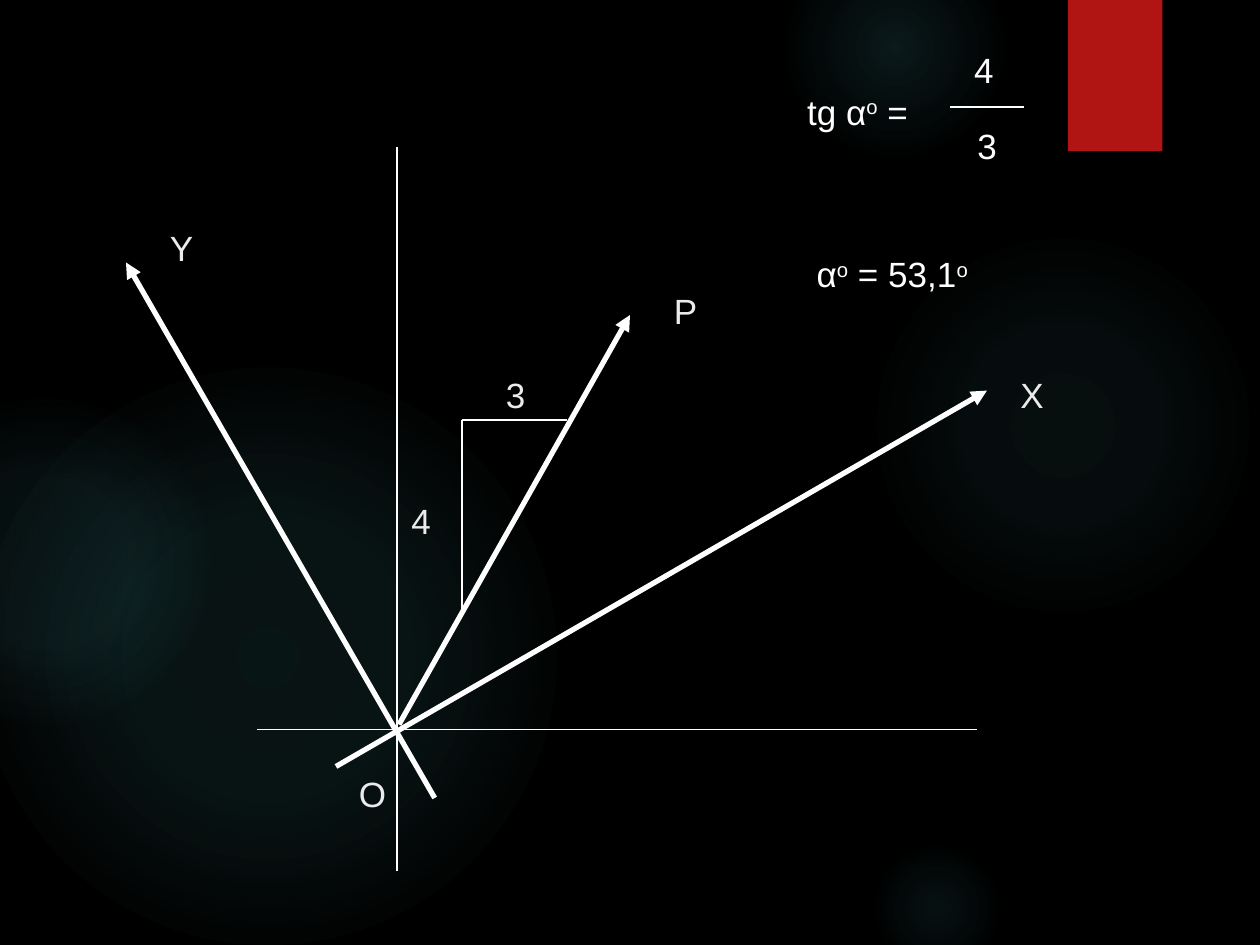
from typing import NamedTuple

from lxml import etree
from pptx import Presentation
from pptx.dml.color import RGBColor
from pptx.enum.shapes import MSO_CONNECTOR, MSO_SHAPE
from pptx.enum.text import MSO_AUTO_SIZE, PP_ALIGN
from pptx.oxml import parse_xml
from pptx.oxml.ns import nsdecls, qn
from pptx.util import Inches, Pt

OVAL, RECT = MSO_SHAPE.OVAL, MSO_SHAPE.RECTANGLE
STRAIGHT = MSO_CONNECTOR.STRAIGHT
JUSTIFY = PP_ALIGN.JUSTIFY
GROW = MSO_AUTO_SIZE.SHAPE_TO_FIT_TEXT

CELL = Inches(1) / 12  # the slide is 120 columns by 90 rows
BLACK, WHITE, PALE, RED, TEAL = "000000", "FFFFFF", "EBEBEB", "B01513", "50B9C1"
THIN, BOLD = 0.75, 3


class Glow(NamedTuple):
    col: float
    row: float
    size: float
    stops: tuple  # (position, opacity) in percent


class Line(NamedTuple):
    start: tuple
    end: tuple
    width: float = THIN
    arrow: bool = False


class Label(NamedTuple):
    col: float
    row: float
    texts: tuple  # plain and raised text by turns
    color: str = PALE
    width: float = 6


GLOWS = [
    Glow(82.7, 22, 37, ((0, 7), (36, 6), (69, 0))),
    Glow(74.7, -6, 21, ((0, 14), (36, 7), (73, 0))),
    Glow(82.7, 80, 13, ((0, 9), (36, 5), (66, 0))),
    Glow(-2, 35, 55, ((0, 11), (36, 10), (75, 0))),
    Glow(-11, 38, 31, ((0, 8), (36, 8), (72, 0))),
]
LINES = [
    Line((41.4, 76), (12, 25), BOLD, True),
    Line((32, 73), (94, 37.2), BOLD, True),
    Line((38, 69), (60, 30), BOLD, True),
    Line((54, 40), (44, 40)),
    Line((44, 40), (44, 58)),
    Line((37.8, 14), (37.8, 83)),
    Line((24.5, 69.5), (93, 69.5)),
    Line((90.5, 10.2), (97.5, 10.2)),
]
LABELS = [
    Label(96, 35, ("X",)),
    Label(63, 27, ("P",)),
    Label(15, 21, ("Y",)),
    Label(38, 47, ("4",)),
    Label(47, 35, ("3",)),
    Label(33, 73, ("O",)),
    Label(75.7, 8, ("tg α", "o", " ="), WHITE, 19),
    Label(91.6, 4, ("4",), WHITE, 8),
    Label(91.9, 11.3, ("3",), WHITE, 8),
    Label(76.6, 23.5, ("α", "o", " = 53,1", "o"), WHITE, 19),
]


def grid(*cells: float) -> list:
    return [round(cell * CELL) for cell in cells]


def paint(fill, color: str) -> None:
    fill.solid()
    fill.fore_color.rgb = RGBColor.from_string(color)


def add_block(slide, kind, *box: float):
    shape = slide.shapes.add_shape(kind, *grid(*box))
    shape.shadow.inherit = False
    shape.line.fill.background()
    return shape


def add_glow(slide, glow: Glow) -> None:
    """Draw a disc that fades out from its centre."""
    shape = add_block(slide, OVAL, glow.col, glow.row, glow.size, glow.size)
    stops = "".join(
        f'<a:gs pos="{pos * 1000}"><a:srgbClr val="{TEAL}">'
        f'<a:alpha val="{alpha * 1000}"/></a:srgbClr></a:gs>'
        for pos, alpha in glow.stops
    )
    fade = parse_xml(
        f'<a:gradFill {nsdecls("a")} rotWithShape="1"><a:gsLst>{stops}</a:gsLst>'
        '<a:path path="circle"><a:fillToRect l="50000" t="50000" r="50000" '
        'b="50000"/></a:path></a:gradFill>'
    )
    shape._element.spPr.find(qn("a:prstGeom")).addnext(fade)


def add_line(slide, line: Line) -> None:
    link = slide.shapes.add_connector(STRAIGHT, *grid(*line.start, *line.end))
    link.line.width = Pt(line.width)
    paint(link.line.fill, WHITE)
    props = link._element.spPr
    if line.arrow:
        etree.SubElement(props.get_or_add_ln(), qn("a:tailEnd"), type="triangle")
    etree.SubElement(props, qn("a:effectLst"))


def add_label(slide, label: Label) -> None:
    box = slide.shapes.add_textbox(*grid(label.col, label.row, label.width, 5.2))
    frame = box.text_frame
    frame.word_wrap = True
    frame.auto_size = GROW
    para = frame.paragraphs[0]
    para.alignment = JUSTIFY
    para.font.name, para.font.size = "Arial", Pt(20)
    para.font.color.rgb = RGBColor.from_string(label.color)
    for place, text in enumerate(label.texts):
        run = para.add_run()
        run.text = text
        if place % 2:
            run._r.get_or_add_rPr().set("baseline", "30000")


def main() -> None:
    deck = Presentation()
    deck.slide_width, deck.slide_height = grid(120, 90)
    slide = deck.slides.add_slide(deck.slide_layouts[6])
    paint(slide.background.fill, BLACK)
    for glow in GLOWS:
        add_glow(slide, glow)
    paint(add_block(slide, RECT, 101.7, 0, 9, 14.4).fill, RED)
    for line in LINES:
        add_line(slide, line)
    for label in LABELS:
        add_label(slide, label)
    deck.save("out.pptx")


if __name__ == "__main__":
    main()
